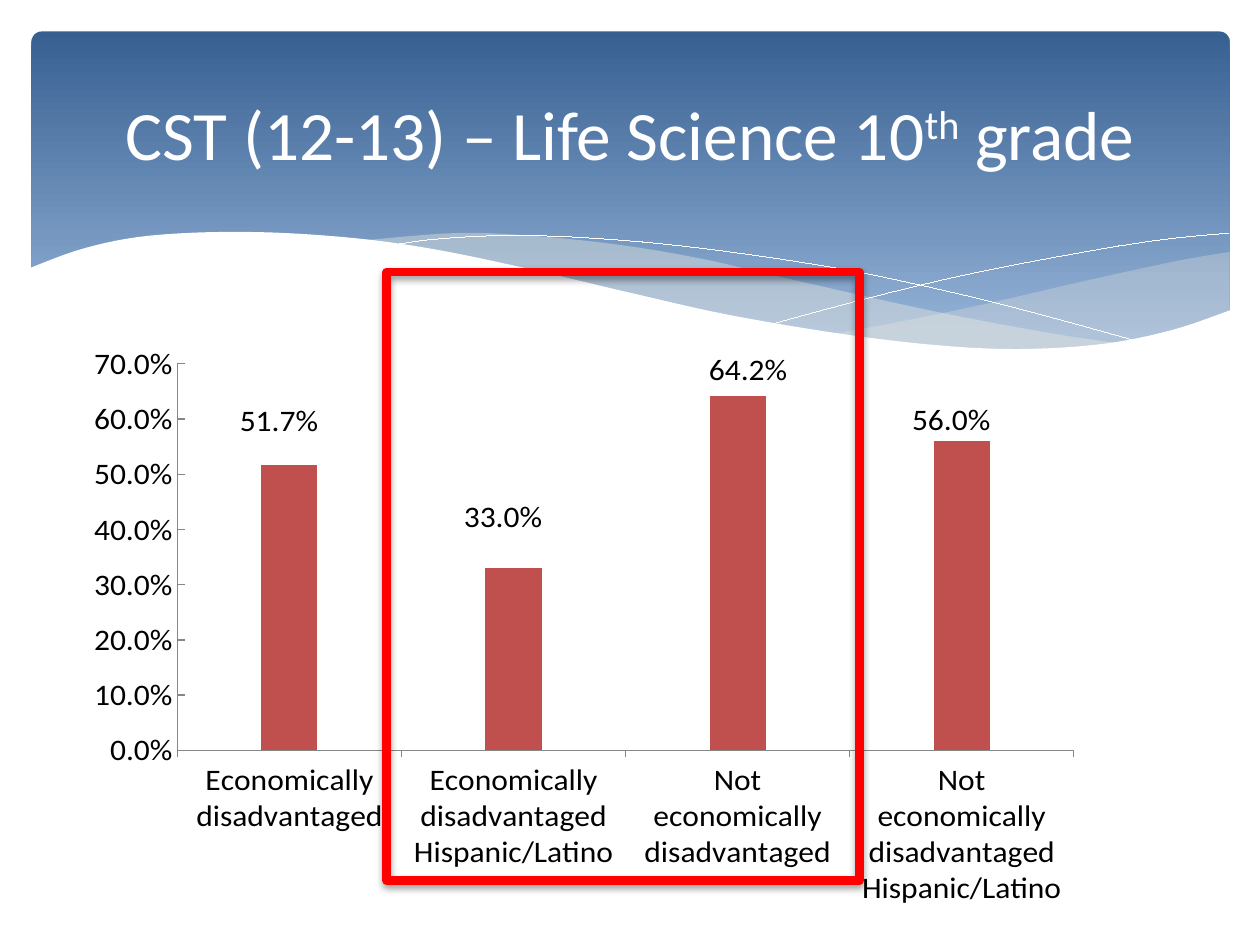
from collections import namedtuple

from lxml import etree
from pptx import Presentation
from pptx.chart.data import CategoryChartData
from pptx.dml.color import RGBColor
from pptx.enum.chart import XL_CHART_TYPE, XL_LABEL_POSITION, XL_TICK_MARK
from pptx.enum.shapes import MSO_SHAPE
from pptx.enum.text import MSO_ANCHOR, PP_ALIGN
from pptx.oxml import parse_xml
from pptx.oxml.ns import nsdecls, qn
from pptx.util import Inches, Pt

Box = namedtuple("Box", "left top width height")

STACKED = XL_CHART_TYPE.COLUMN_STACKED
CENTER_LABEL = XL_LABEL_POSITION.CENTER
TICK_IN, TICK_OUT = XL_TICK_MARK.INSIDE, XL_TICK_MARK.OUTSIDE
RECTANGLE, ROUNDED = MSO_SHAPE.RECTANGLE, MSO_SHAPE.ROUNDED_RECTANGLE
MIDDLE, CENTERED = MSO_ANCHOR.MIDDLE, PP_ALIGN.CENTER

FONT = "Calibri"
COLORS = {
    "band_top": "376092", "band_bottom": "95B3D7", "ribbon": "EEECE1",
    "white": "FFFFFF", "text": "000000", "axis": "868686",
    "bar": "C0504D", "frame": "FF0000",
}

RIGHT_RIBBON = [
    [(9.53, .16), (9.12, .23), (8.38, .39), (7.56, .58), (6.83, .73), (6.38, .81)],
    [(6.38, .81), (6.96, .88), (7.58, .93), (8.12, .93), (8.58, .89), (9.05, .79),
     (9.53, .63)],
]
LEFT_RIBBON = [
    [(8.7, .89), (8.14, .81), (7.18, .63), (6.06, .38), (5.32, .21), (4.66, .1),
     (3.97, .03), (3.38, .01), (2.63, .07)],
    [(2.63, .07), (3.19, .15), (3.81, .27), (4.68, .48), (5.61, .68), (6.42, .82),
     (7.13, .91), (7.84, .94), (8.34, .93), (8.7, .89)],
]
FALLING_LINE = [[(2.86, .11), (3.21, .06), (3.78, .03), (4.46, .05), (5.33, .13),
                 (6.42, .29), (7.37, .49), (8.08, .67), (8.84, .88)]]
RISING_LINE = [[(5.9, .73), (6.72, .51), (7.53, .32), (8.43, .15), (9.01, .06),
                (9.52, .01)]]
WHITE_WAVE = [
    [(9.54, .62), (9.07, .78), (8.52, .89), (7.86, .93), (7.21, .9), (6.45, .81),
     (5.56, .66), (4.8, .49), (3.95, .29), (3.17, .13), (2.48, .04), (1.7, 0),
     (.96, .03), (.44, .13), (0, .29)],
    [(0, 1.45), (9.54, 1.45)],
]

SCORES = [
    ("Economically disadvantaged", .517, (-.01, -.34)),
    ("Economically disadvantaged Hispanic/Latino", .33, (-.01, -.26)),
    ("Not economically disadvantaged", .642, (.01, -.37)),
    ("Not economically disadvantaged Hispanic/Latino", .56, (-.01, -.32)),
]


def color(name):
    """Return the named palette colour."""
    return RGBColor.from_string(COLORS[name])


def smooth(knots, steps=6):
    """Return points on a Catmull-Rom curve through the knots."""
    if len(knots) < 3:
        return knots
    padded = [knots[0], *knots, knots[-1]]
    points = [knots[0]]
    for a, b, c, d in zip(padded, padded[1:], padded[2:], padded[3:]):
        for step in range(1, steps + 1):
            t = step / steps
            points.append(tuple(
                .5 * (2 * q + (r - p) * t + (2 * p - 5 * q + 4 * r - s) * t ** 2
                      + (3 * q - p - 3 * r + s) * t ** 3)
                for p, q, r, s in zip(a, b, c, d)))
    return points


def add_curve(slide, box, curves, fill=None, opacity=100):
    """Draw joined curves as a filled outline, or as a white hairline without a fill."""
    points = [(box.left + Inches(x), box.top + Inches(y))
              for curve in curves for x, y in smooth(curve)]
    builder = slide.shapes.build_freeform(*points[0], scale=1.0)
    builder.add_line_segments(points[1:], close=fill is not None)
    outline = builder.convert_to_shape()
    outline.shadow.inherit = False
    if fill is None:
        outline.fill.background()
        outline.line.color.rgb = color("white")
        outline.line._ln.set("w", "0")
        return
    outline.line.fill.background()
    outline.fill.solid()
    outline.fill.fore_color.rgb = color(fill)
    if opacity < 100:
        tint = outline.fill._xPr.find(qn("a:solidFill"))[0]
        etree.SubElement(tint, qn("a:alpha")).set("val", str(opacity * 1000))


def add_band(slide, box):
    """Draw the rounded gradient band."""
    band = slide.shapes.add_shape(ROUNDED, *box)
    band.adjustments[0] = .03
    band.shadow.inherit = False
    band.line.fill.background()
    band.fill.gradient()
    band.fill.gradient_angle = 270
    stops = zip(band.fill.gradient_stops, ("band_top", "band_bottom"), (0, .9))
    for stop, name, position in stops:
        stop.color.rgb = color(name)
        stop.position = position


def add_waves(slide, box):
    """Draw the ribbons, hairlines and white wave under the band."""
    add_curve(slide, box, RIGHT_RIBBON, "ribbon", 29)
    add_curve(slide, box, LEFT_RIBBON, "ribbon", 40)
    add_curve(slide, box, FALLING_LINE)
    add_curve(slide, box, RISING_LINE)
    add_curve(slide, box, WHITE_WAVE, "white")


def add_title(slide, box):
    """Write the title with its raised ordinal."""
    frame = slide.shapes.add_textbox(*box).text_frame
    frame.word_wrap = True
    frame.vertical_anchor = MIDDLE
    paragraph = frame.paragraphs[0]
    paragraph.alignment = CENTERED
    for text, baseline in (("CST (12-13) – Life Science 10", 0), ("th", 30000),
                           (" grade", 0)):
        run = paragraph.add_run()
        run.text = text
        run.font.name, run.font.size = FONT, Pt(39.6)
        run.font.color.rgb = color("white")
        if baseline:
            run.font._element.set("baseline", str(baseline))


def manual_layout(values):
    """Build a chart layout element from its named values."""
    parts = "".join(f'<c:{name} val="{value}"/>' for name, value in values)
    return parse_xml(f"<c:layout {nsdecls('c')}><c:manualLayout>{parts}"
                     "</c:manualLayout></c:layout>")


def raise_labels(scores):
    """Show each value above its column, without leader lines."""
    labels = scores.data_labels
    labels.show_value = True
    labels.number_format = "0.0%"
    labels.number_format_is_linked = False
    for index, (_, _, offset) in enumerate(SCORES):
        scores.points[index].data_label.position = CENTER_LABEL
        label = labels._element.findall(qn("c:dLbl"))[index]
        label.insert(1, manual_layout(zip("xy", offset)))
    for leader in labels._element.findall(qn("c:showLeaderLines")):
        leader.set("val", "0")
    labels._element.append(parse_xml(
        f'<c:extLst {nsdecls("c")}><c:ext uri="{{CE6537A1-D6FC-4f65-9D91-7224C49458BB}}" '
        'xmlns:c15="http://schemas.microsoft.com/office/drawing/2012/chart">'
        '<c15:showLeaderLines val="0"/></c:ext></c:extLst>'))


def add_score_chart(slide, box):
    """Chart the scores with labels raised above the columns."""
    data = CategoryChartData(number_format="0.0%")
    data.categories = [group for group, _, _ in SCORES]
    data.add_series("Series 1", [score for _, score, _ in SCORES])
    chart = slide.shapes.add_chart(STACKED, *box, data).chart
    chart.has_legend = chart.has_title = False
    chart.font.name, chart.font.size = FONT, Pt(18)
    chart.font.color.rgb = color("text")

    area = chart._chartSpace.chart.plotArea
    for layout in area.findall(qn("c:layout")):
        area.remove(layout)
    area.insert(0, manual_layout([
        ("layoutTarget", "inner"), ("xMode", "edge"), ("yMode", "edge"),
        ("x", .126), ("y", .071), ("w", .855), ("h", .705)]))

    percent, groups = chart.value_axis, chart.category_axis
    percent.minimum_scale, percent.maximum_scale, percent.major_unit = 0, .7, .1
    percent.has_major_gridlines = False
    percent.tick_labels.number_format = "0.0%"
    percent.tick_labels.number_format_is_linked = False
    for axis, tick in ((percent, TICK_IN), (groups, TICK_OUT)):
        axis.major_tick_mark = tick
        axis.format.line.color.rgb = color("axis")

    plot = chart.plots[0]
    plot.gap_width, plot.overlap, plot.vary_by_categories = 300, 78, False
    scores = plot.series[0]
    scores.format.fill.solid()
    scores.format.fill.fore_color.rgb = color("bar")
    raise_labels(scores)


def add_highlight(slide, box):
    """Frame the two compared groups in red."""
    frame = slide.shapes.add_shape(RECTANGLE, *box)
    frame.fill.background()
    frame.line.color.rgb = color("frame")
    frame.line.width = Pt(5)
    etree.SubElement(frame.line._ln, qn("a:round"))
    frame.shadow.inherit = False
    effects = frame._element.spPr.find(qn("a:effectLst"))
    effects.append(parse_xml(
        f'<a:outerShdw {nsdecls("a")} blurRad="{Pt(4)}" dist="{Pt(2)}" dir="5400000" '
        f'rotWithShape="0"><a:srgbClr val="{COLORS["text"]}"><a:alpha val="38000"/>'
        "</a:srgbClr></a:outerShdw>"))


def main():
    """Build and save the slide."""
    deck = Presentation()
    deck.slide_width, deck.slide_height = Inches(10), Inches(7.5)
    slide = deck.slides.add_slide(deck.slide_layouts[6])
    for add_region, bounds in (
            (add_band, (.25, .25, 9.51, 2.7)), (add_waves, (.23, 1.84, 9.54, 1.45)),
            (add_title, (.5, .37, 9, 1.37)), (add_score_chart, (.36, 2.58, 8.32, 4.61)),
            (add_highlight, (3.07, 2.16, 3.75, 4.83))):
        add_region(slide, Box(*map(Inches, bounds)))
    deck.save("out.pptx")


if __name__ == "__main__":
    main()
